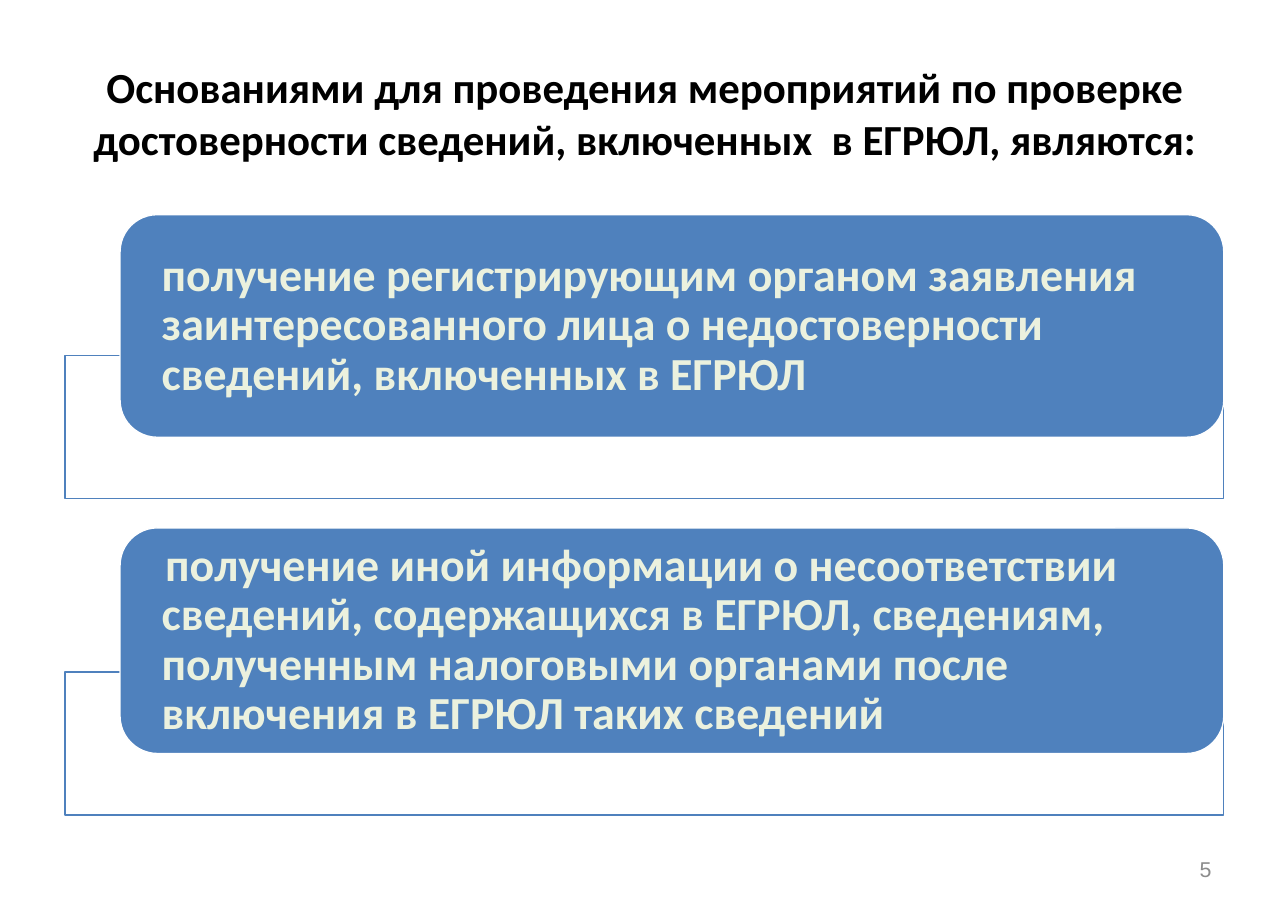
from dataclasses import dataclass

import pptx
import pptx.dml.color
import pptx.enum.shapes
import pptx.enum.text
import pptx.oxml.ns
import pptx.util
from lxml import etree

Cm = pptx.util.Cm
Shape = pptx.enum.shapes.MSO_SHAPE
Align = pptx.enum.text.PP_ALIGN


@dataclass(frozen=True)
class Theme:
    white: str = "FFFFFF"
    black: str = "000000"
    blue: str = "4F81BD"
    cream: str = "EBF1DE"
    grey: str = "8C8C8C"
    font: str = "Calibri"
    number_font: str = "Arial"
    title: int = 28
    body: int = 30
    number: int = 14
    lead: int = 10
    line: float = 0.85


def rgb(color):
    return pptx.dml.color.RGBColor.from_string(color)


class Deck:
    def __init__(self, theme):
        self.theme = theme
        self.prs = pptx.Presentation()
        self.prs.slide_width, self.prs.slide_height = Cm(29.7), Cm(21)
        self.s = self.prs.slides.add_slide(self.prs.slide_layouts[6])

    def panel(self, kind, box, fill, line, opacity=100):
        sp = self.s.shapes.add_shape(kind, *map(Cm, box))
        sp.shadow.inherit = False
        sp.fill.solid()
        sp.fill.fore_color.rgb = rgb(fill)
        if opacity < 100:
            color = sp.fill._xPr.find(".//" + pptx.oxml.ns.qn("a:srgbClr"))
            alpha = etree.SubElement(color, pptx.oxml.ns.qn("a:alpha"))
            alpha.set("val", str(opacity * 1000))
        sp.line.color.rgb = rgb(line)
        sp.line.width = pptx.util.Pt(self.theme.line)

    def text(self, box, runs, align=Align.LEFT, inset=(0.28, 0.15), spacing=1.0):
        tf = self.s.shapes.add_textbox(*map(Cm, box)).text_frame
        tf.word_wrap = True
        tf.vertical_anchor = pptx.enum.text.MSO_ANCHOR.MIDDLE
        tf.margin_left = tf.margin_right = Cm(inset[0])
        tf.margin_top = tf.margin_bottom = Cm(inset[1])
        p = tf.paragraphs[0]
        p.alignment = align
        p.line_spacing = spacing
        for words, font, size, color, bold in runs:
            r = p.add_run()
            r.text = words
            r.font.name = font
            r.font.size = pptx.util.Pt(size)
            r.font.color.rgb = rgb(color)
            r.font.bold = bold

    def ground(self, top, height, runs):
        t = self.theme
        self.panel(Shape.RECTANGLE, (1.5, top + height - 1.88, 26.72, 3.3), t.white, t.blue, 90)
        self.panel(Shape.ROUNDED_RECTANGLE, (2.77, top, 25.45, height), t.blue, t.white)
        self.text((3.02, top + 0.25, 24.94, height - 0.5), runs, inset=(0.71, 0), spacing=0.9)


def main():
    t = Theme()
    deck = Deck(t)
    title = "Основаниями для проведения мероприятий по проверке достоверности сведений, включенных  в ЕГРЮЛ, являются:"
    application = "получение регистрирующим органом заявления заинтересованного лица о недостоверности сведений, включенных в ЕГРЮЛ"
    information = (
        "получение иной информации о несоответствии сведений, содержащихся в ЕГРЮЛ, сведениям, "
        "полученным налоговыми органами после включения в ЕГРЮЛ таких сведений"
    )
    deck.text((1.5, 0.84, 26.72, 3.5), [(title, t.font, t.title, t.black, True)], Align.CENTER)
    deck.ground(4.95, 5.13, [(application, t.font, t.body, t.cream, True)])
    deck.ground(12.17, 5.2, [
        (" ", t.font, t.lead, t.white, False),
        (information, t.font, t.body, t.cream, True),
    ])
    deck.text((21.28, 19.46, 6.94, 1.12), [("5", t.number_font, t.number, t.grey, False)], Align.RIGHT)
    deck.prs.save("out.pptx")


if __name__ == "__main__":
    main()
